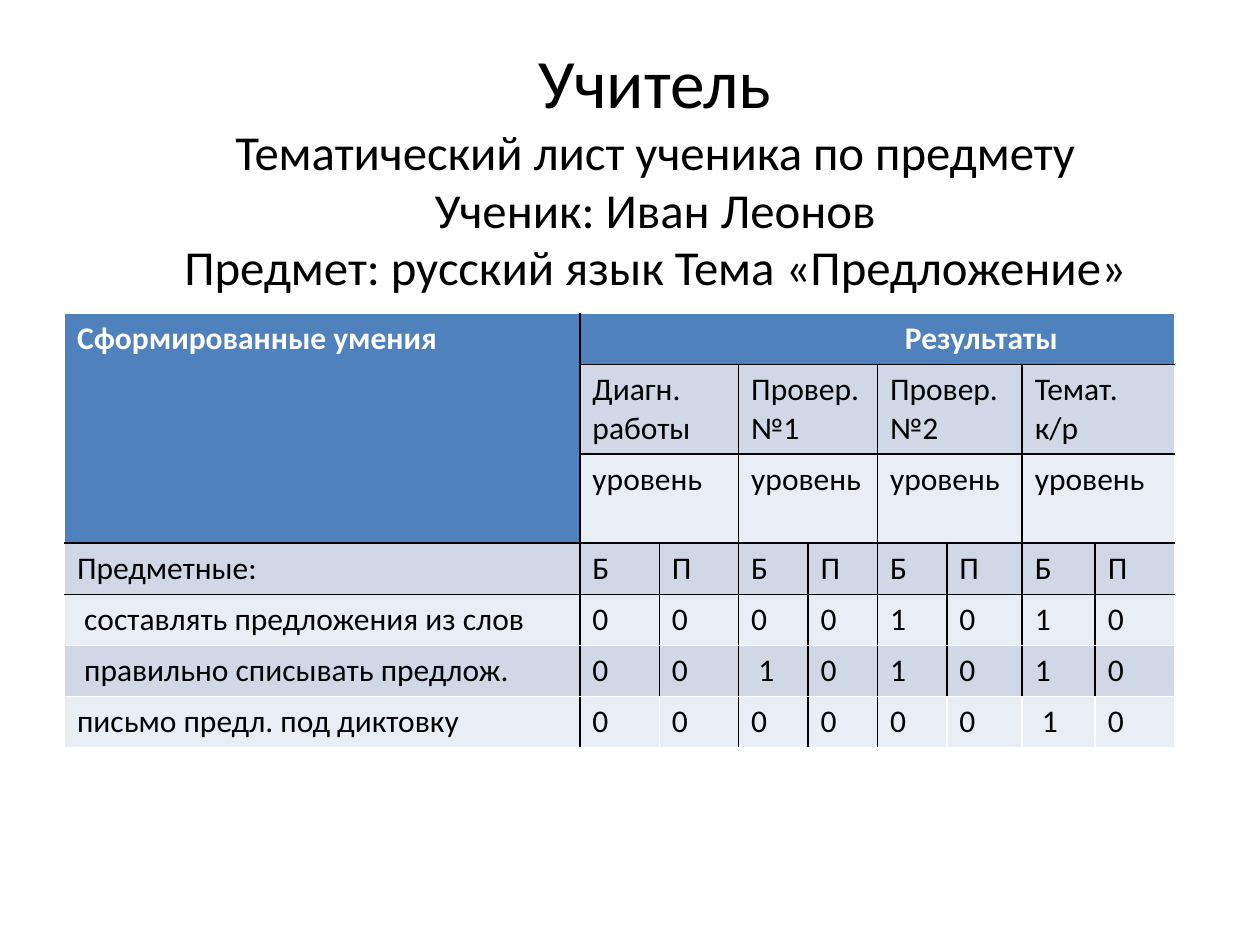
"""Build the slide with a pupil's topic sheet and its table of results."""
from lxml import etree
from pptx import Presentation
from pptx import util as u
from pptx.dml.color import RGBColor
from pptx.enum import text
from pptx.oxml.ns import qn

COLORS = {"black": "000000", "white": "FFFFFF", "header": "4F81BD",
          "odd": "D0D8E8", "even": "E9EDF4"}
FONT = "Calibri"

TITLE = [("Учитель", 39.6),
         ("Тематический лист ученика по предмету", 27.9),
         ("Ученик: Иван Леонов", 27.9),
         ("Предмет: русский язык Тема «Предложение»", 27.9)]

SKILLS, RESULTS = "Сформированные умения", "Результаты"
WORKS = ["Диагн. работы", "Провер. №1", "Провер. №2", "Темат. к/р"]
LEVEL = "уровень"
MARKS = [["Предметные:"] + ["Б", "П"] * 4,
         [" составлять предложения из слов", "0", "0", "0", "0", "1", "0", "1", "0"],
         [" правильно списывать предлож.", "0", "0", " 1", "0", "1", "0", "1", "0"],
         ["письмо предл. под диктовку", "0", "0", "0", "0", "0", "0", " 1", "0"]]

COL_WIDTHS = [10.39, 1.6, 1.6, 1.4, 1.4, 1.4, 1.52, 1.47, 1.6]
ROW_HEIGHTS = [1.03, 1.8, 1.8] + [1.03] * 4
HEAD_ROWS = len(ROW_HEIGHTS) - len(MARKS)
LAST_ROW, LAST_COL = len(ROW_HEIGHTS) - 1, len(COL_WIDTHS)
WHITE_ROW_EDGES = {0, 5, 6, 7}
WHITE_COL_EDGES = {0, LAST_COL}
LAST_ROW_WHITE_EDGES = WHITE_COL_EDGES | {2, 6, 7, 8}


def style(p, size, color, bold=False):
    for r in p.runs:
        r.font.name = FONT
        r.font.size = u.Pt(size)
        r.font.bold = bold
        r.font.color.rgb = RGBColor.from_string(COLORS[color])


def add_title(s):
    sp = s.shapes.add_textbox(u.Cm(2.11), u.Cm(1.93), u.Cm(22.2), u.Cm(3))
    tf = sp.text_frame
    tf.word_wrap = True
    tf.vertical_anchor = text.MSO_ANCHOR.MIDDLE
    p = tf.paragraphs[0]
    p.text = "\v".join(line for line, _ in TITLE)
    p.alignment = text.PP_ALIGN.CENTER
    p.line_spacing = 0.98
    style(p, TITLE[0][1], "black")
    for r, (_, size) in zip(p.runs, TITLE):
        r.font.size = u.Pt(size)


def add_borders(cell, row, col):
    bottom, right = row + cell.span_height, col + cell.span_width
    if not cell.is_merge_origin:
        bottom, right = row + 1, col + 1
    white_cols = LAST_ROW_WHITE_EDGES if row == LAST_ROW else WHITE_COL_EDGES
    edges = [("a:lnL", col in white_cols), ("a:lnR", right in white_cols),
             ("a:lnT", row in WHITE_ROW_EDGES), ("a:lnB", bottom in WHITE_ROW_EDGES)]
    tc_pr = cell._tc.get_or_add_tcPr()
    for tag, is_white in edges:
        ln = etree.SubElement(tc_pr, qn(tag), w=str(u.Pt(1)))
        fill = etree.SubElement(ln, qn("a:solidFill"))
        etree.SubElement(fill, qn("a:srgbClr"), val=COLORS["white" if is_white else "black"])


def fill_cell(cell, row, col, words):
    add_borders(cell, row, col)
    name = "header" if row == 0 else "odd" if row % 2 else "even"
    cell.fill.solid()
    cell.fill.fore_color.rgb = RGBColor.from_string(COLORS[name])
    p = cell.text_frame.paragraphs[0]
    p.text = words
    style(p, 18, "black" if row else "white", bold=row == 0)


def add_results(s):
    frame = s.shapes.add_table(len(ROW_HEIGHTS), LAST_COL, u.Cm(1.3), u.Cm(6.32),
                               u.Cm(sum(COL_WIDTHS)), u.Cm(sum(ROW_HEIGHTS)))
    table = frame.table
    table.first_row = table.horz_banding = False
    for column, width in zip(table.columns, COL_WIDTHS):
        column.width = u.Cm(width)
    for row, height in zip(table.rows, ROW_HEIGHTS):
        row.height = u.Cm(height)

    table.cell(0, 0).merge(table.cell(HEAD_ROWS - 1, 0))
    table.cell(0, 1).merge(table.cell(0, LAST_COL - 1))
    content = {(0, 0): SKILLS, (0, 1): RESULTS}
    for i, work in enumerate(WORKS):
        col = 1 + 2 * i
        for row, words in ((1, work), (2, LEVEL)):
            table.cell(row, col).merge(table.cell(row, col + 1))
            content[row, col] = words
    for row, values in enumerate(MARKS, HEAD_ROWS):
        for col, words in enumerate(values):
            content[row, col] = words

    for (row, col), words in content.items():
        fill_cell(table.cell(row, col), row, col, words)
    table.cell(0, 1).margin_left = u.Cm(6.55)


def main():
    prs = Presentation()
    prs.slide_width, prs.slide_height = u.Cm(25.4), u.Cm(19.05)
    s = prs.slides.add_slide(prs.slide_layouts[6])
    add_title(s)
    add_results(s)
    prs.save("out.pptx")


if __name__ == "__main__":
    main()
